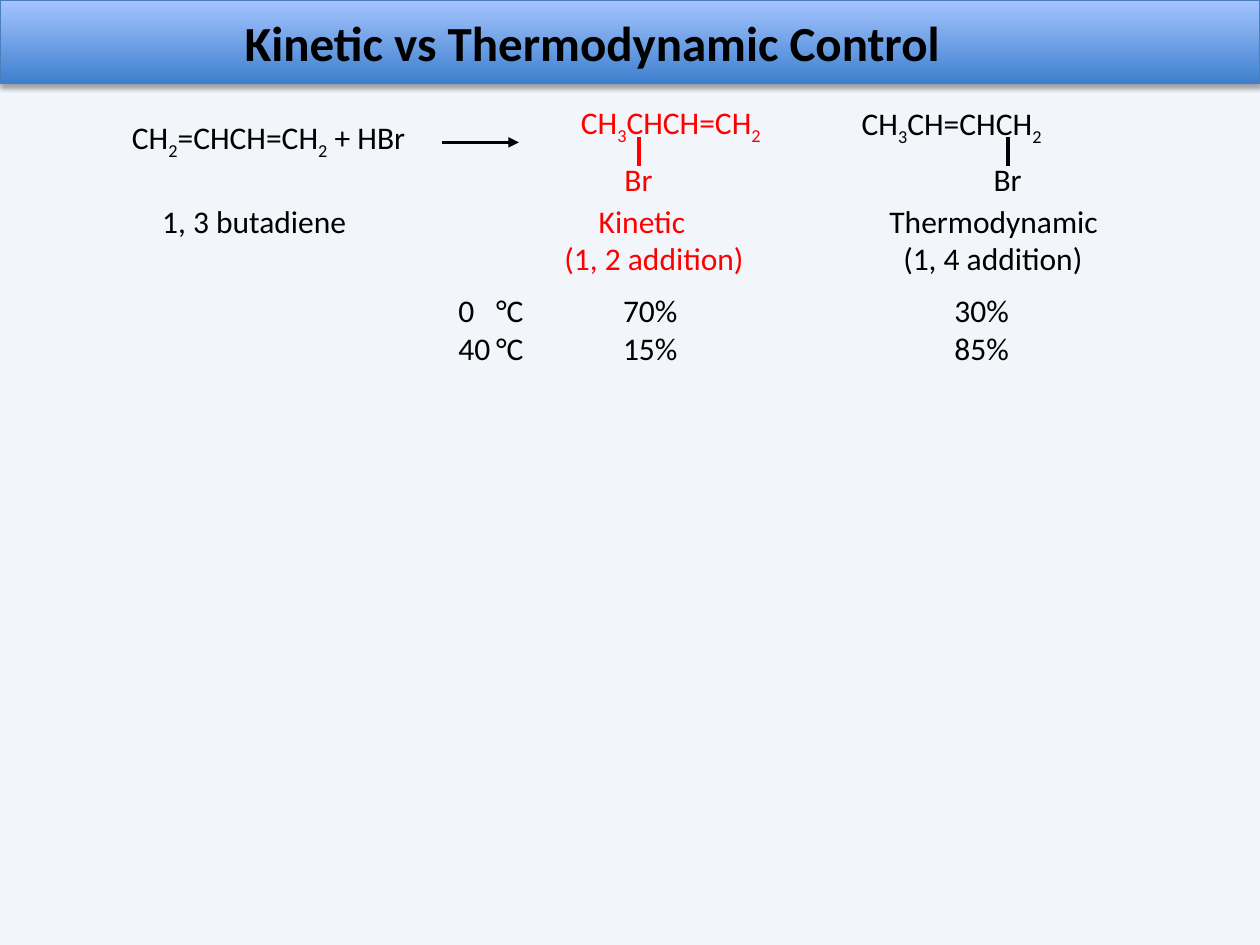
from dataclasses import dataclass
from itertools import groupby

from lxml import etree
from pptx import Presentation
from pptx.dml.color import RGBColor
from pptx.enum.shapes import MSO_CONNECTOR
from pptx.enum.text import MSO_ANCHOR, MSO_AUTO_SIZE, PP_ALIGN
from pptx.oxml.ns import qn
from pptx.util import Cm, Pt

BLACK = RGBColor(0x00, 0x00, 0x00)
RED = RGBColor(0xFF, 0x00, 0x00)
BACKGROUND = RGBColor(0xDC, 0xE6, 0xF2)
BANNER_COLORS = RGBColor(0x3F, 0x80, 0xCE), RGBColor(0xA4, 0xC4, 0xFF)
BANNER_LINE = RGBColor(0x4B, 0x7E, 0xBC)
STRAIGHT = MSO_CONNECTOR.STRAIGHT
LEFT = PP_ALIGN.LEFT
MIDDLE = MSO_ANCHOR.MIDDLE
NO_AUTOFIT = MSO_AUTO_SIZE.NONE

LINE_H = 1.02
TWO_LINES_H = 1.8
LABEL_TOP = 3.94
YIELD_TABS = (0.76, 3.32, 10.0)


@dataclass
class Label:
    lines: tuple[str, ...]
    left: float
    width: float
    indents: tuple[float, ...]
    color: RGBColor


@dataclass
class Product:
    formula: str
    left: float
    top: float
    bond_x: float
    color: RGBColor


LABELS = (
    Label(("1, 3 butadiene",), 3.02, 4.27, (0,), BLACK),
    Label(("Kinetic", "(1, 2 addition)"), 11.13, 4.17, (0.69, 0), RED),
    Label(("Thermodynamic", "(1, 4 addition)"), 17.68, 4.75, (0, 0.28), BLACK),
)
PRODUCTS = (
    Product("CH3CHCH=CH2", 11.46, 1.96, 12.88, RED),
    Product("CH3CH=CHCH2", 17.12, 1.98, 20.32, BLACK),
)
YIELDS = (("0", "°C", "70%", "30%"), ("40", "°C", "15%", "85%"))


def set_font(font, color: RGBColor, **extra) -> None:
    for name, value in {"name": "Calibri", "size": Pt(18), **extra}.items():
        setattr(font, name, value)
    font.color.rgb = color


def add_text(shapes, lines, left: float, top: float, width: float,
             height: float, color: RGBColor):
    tf = shapes.add_textbox(Cm(left), Cm(top), Cm(width), Cm(height)).text_frame
    tf.word_wrap = True
    for i, line in enumerate(lines):
        p = tf.paragraphs[0] if i == 0 else tf.add_paragraph()
        r = p.add_run()
        r.text = line
        set_font(r.font, color)
    return tf


def add_formula(shapes, formula: str, left: float, top: float, width: float,
                color: RGBColor) -> None:
    tf = add_text(shapes, (), left, top, width, LINE_H, color)
    for is_sub, chars in groupby(formula, str.isdigit):
        r = tf.paragraphs[0].add_run()
        r.text = "".join(chars)
        set_font(r.font, color)
        if is_sub:
            r.font._element.set("baseline", "-25000")


def add_line(shapes, x1: float, y1: float, x2: float, y2: float, color: RGBColor):
    line = shapes.add_connector(STRAIGHT, Cm(x1), Cm(y1), Cm(x2), Cm(y2))
    line.line.color.rgb = color
    line.line.width = Pt(2)
    etree.SubElement(line._element.spPr, qn("a:effectLst"))
    return line


def add_product(shapes, product: Product) -> None:
    group = shapes.add_group_shape().shapes
    add_formula(group, product.formula, product.left, product.top, 4.24, product.color)
    add_line(group, product.bond_x, 2.76, product.bond_x, 3.35, product.color)
    add_text(group, ("Br",), product.bond_x - 0.54, 3.1, 1.09, LINE_H, product.color)


def add_label(shapes, label: Label) -> None:
    height = LINE_H if len(label.lines) == 1 else TWO_LINES_H
    tf = add_text(shapes, label.lines, label.left, LABEL_TOP, label.width, height,
                  label.color)
    for p, indent in zip(tf.paragraphs, label.indents):
        if indent:
            p._p.get_or_add_pPr().set("marL", str(Cm(indent)))


def add_yields(shapes) -> None:
    tf = add_text(shapes, ("\t".join(row) for row in YIELDS), 8.99, 5.74, 12.14,
                  TWO_LINES_H, BLACK)
    for p in tf.paragraphs:
        tabs = etree.SubElement(p._p.get_or_add_pPr(), qn("a:tabLst"))
        for pos in YIELD_TABS:
            etree.SubElement(tabs, qn("a:tab"), pos=str(Cm(pos)), algn="l")


def format_banner(sp, width: int) -> None:
    box = {"left": 0, "top": 0, "width": width, "height": Cm(1.68)}
    for name, value in box.items():
        setattr(sp, name, value)
    sp.fill.gradient()
    sp.fill.gradient_angle = 90
    for stop, color in zip(sp.fill.gradient_stops, BANNER_COLORS):
        stop.color.rgb = color
    sp.line.color.rgb = BANNER_LINE
    sp.line.width = Pt(0.75)
    effects = etree.SubElement(sp._element.spPr, qn("a:effectLst"))
    shadow = etree.SubElement(effects, qn("a:outerShdw"), blurRad=str(Pt(3.1)),
                              dist=str(Pt(1.8)), dir="5400000", rotWithShape="0")
    black = etree.SubElement(shadow, qn("a:srgbClr"), val=str(BLACK))
    etree.SubElement(black, qn("a:alpha"), val="35000")
    tf = sp.text_frame
    frame = {"auto_size": NO_AUTOFIT, "word_wrap": True, "vertical_anchor": MIDDLE,
             "margin_left": Cm(4.93)}
    for name, value in frame.items():
        setattr(tf, name, value)
    p = tf.paragraphs[0]
    p.alignment = LEFT
    r = p.add_run()
    r.text = "Kinetic vs Thermodynamic Control"
    set_font(r.font, BLACK, size=Pt(28), bold=True)


def main() -> None:
    prs = Presentation()
    prs.slide_width, prs.slide_height = Cm(25.4), Cm(19.05)
    s = prs.slides.add_slide(prs.slide_layouts[5])
    fill = s.background.fill
    fill.solid()
    fill.fore_color.rgb = BACKGROUND
    color = s._element.find(".//" + qn("p:bgPr")).find(".//" + qn("a:srgbClr"))
    etree.SubElement(color, qn("a:alpha"), val="37000")

    format_banner(s.shapes.title, prs.slide_width)
    add_formula(s.shapes, "CH2=CHCH=CH2 + HBr", 2.41, 2.26, 6.3, BLACK)
    arrow = add_line(s.shapes, 8.92, 2.87, 10.46, 2.87, BLACK)
    etree.SubElement(arrow.get_or_add_ln(), qn("a:tailEnd"), type="triangle")
    for product in PRODUCTS:
        add_product(s.shapes, product)
    for label in LABELS:
        add_label(s.shapes, label)
    add_yields(s.shapes)
    prs.save("out.pptx")


if __name__ == "__main__":
    main()
